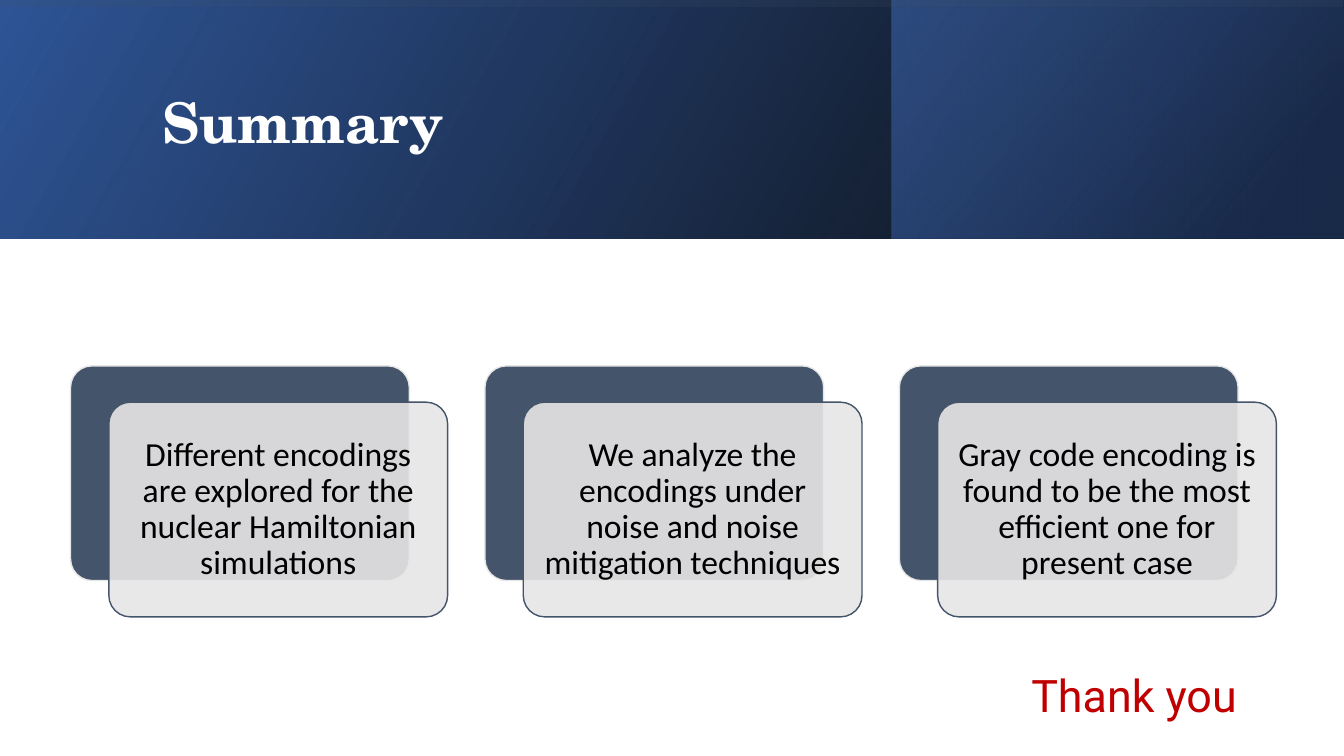
"""Build the closing summary slide with a gradient header and three cards."""
from dataclasses import dataclass

from lxml import etree
from pptx import Presentation
from pptx.dml.color import RGBColor
from pptx.enum.shapes import MSO_SHAPE
from pptx.enum.text import MSO_ANCHOR, PP_ALIGN
from pptx.oxml.ns import qn
from pptx.util import Inches, Pt

RECT = MSO_SHAPE.RECTANGLE
ROUNDED = MSO_SHAPE.ROUNDED_RECTANGLE
MIDDLE = MSO_ANCHOR.MIDDLE
LEFT, CENTER = PP_ALIGN.LEFT, PP_ALIGN.CENTER

COLORS = {
    "black": "000000",
    "white": "FFFFFF",
    "navy": "203864",
    "royal": "2F5597",
    "blue": "4472C4",
    "slate": "44546A",
    "mist": "E7E6E6",
    "red": "C00000",
}
SLIDE_W, SLIDE_H = 13.33, 7.5
HEADER_H = 2.37
CARD_X, CARD_Y, CARD_STEP = 0.7, 3.63, 4.11
CARD_W, CARD_H = 3.36, 2.13
FRONT_DX, FRONT_DY = 0.38, 0.36


@dataclass
class Stop:
    pos: int
    color: str
    alpha: int = 100


@dataclass
class Band:
    x: float
    w: float
    angle: int
    stops: list[Stop]


@dataclass
class Font:
    name: str
    size: int
    color: str
    bold: bool = False


BANDS = [
    Band(0, SLIDE_W, 210, [Stop(0, "black", 96), Stop(100, "royal")]),
    Band(8.84, 4.49, 220, [Stop(19, "navy", 68), Stop(100, "blue", 48)]),
    Band(0, SLIDE_W, 90, [Stop(0, "slate", 16), Stop(3, "slate", 16),
                          Stop(3, "royal", 0), Stop(100, "royal", 0)]),
]
CARDS = [
    "Different encodings are explored for the nuclear Hamiltonian simulations",
    "We analyze the encodings under noise and noise mitigation techniques",
    "Gray code encoding is found to be the most efficient one for present case",
]
TITLE_FONT = Font("TeX Gyre Schola", 40, "white", True)
CARD_FONT = Font("Calibri", 24, "black")
THANKS_FONT = Font("Roboto", 32, "red")


def rgb(name: str) -> RGBColor:
    """Return a palette colour."""
    return RGBColor.from_string(COLORS[name])


def add_alpha(clr, percent: int) -> None:
    """Set the opacity of a colour element."""
    etree.SubElement(clr, qn("a:alpha"), val=str(percent * 1000))


def add_box(s, kind, x: float, y: float, w: float, h: float):
    """Add a preset shape without shadow or line."""
    sp = s.shapes.add_shape(kind, Inches(x), Inches(y), Inches(w), Inches(h))
    sp.shadow.inherit = False
    sp.line.fill.background()
    return sp


def add_band(s, band: Band) -> None:
    """Add a header band with a linear gradient."""
    sp = add_box(s, RECT, band.x, 0, band.w, HEADER_H)
    sp.fill.gradient()
    grad = sp.element.spPr.find(qn("a:gradFill"))
    stops = grad.find(qn("a:gsLst"))
    for old in list(stops):
        stops.remove(old)
    for stop in band.stops:
        gs = etree.SubElement(stops, qn("a:gs"), pos=str(stop.pos * 1000))
        clr = etree.SubElement(gs, qn("a:srgbClr"), val=COLORS[stop.color])
        add_alpha(clr, stop.alpha)
    lin = grad.find(qn("a:lin"))
    lin.set("ang", str(band.angle * 60000))
    lin.set("scaled", "0")


def write(tf, text: str, font: Font, align=LEFT, spacing: float = 1.0) -> None:
    """Write one run into a text frame."""
    p = tf.paragraphs[0]
    p.alignment = align
    p.line_spacing = spacing
    r = p.add_run()
    r.text = text
    r.font.name = font.name
    r.font.size = Pt(font.size)
    r.font.bold = font.bold
    r.font.color.rgb = rgb(font.color)


def add_text(s, x: float, y: float, w: float, h: float, wrap: bool):
    """Add a text box and return its text frame."""
    tf = s.shapes.add_textbox(Inches(x), Inches(y), Inches(w), Inches(h)).text_frame
    tf.word_wrap = wrap
    return tf


def add_panel(s, x: float, y: float, fill: str, line: str):
    """Add one rounded panel of a card."""
    sp = add_box(s, ROUNDED, x, y, CARD_W, CARD_H)
    sp.adjustments[0] = 0.1
    sp.fill.solid()
    sp.fill.fore_color.rgb = rgb(fill)
    sp.line.color.rgb = rgb(line)
    sp.line.width = Pt(1)
    return sp


def add_card(s, x: float, text: str) -> None:
    """Add a dark panel with a translucent text panel over it."""
    add_panel(s, x, CARD_Y, "slate", "mist")
    sp = add_panel(s, x + FRONT_DX, CARD_Y + FRONT_DY, "mist", "slate")
    add_alpha(sp.element.spPr.find(qn("a:solidFill"))[0], 90)
    tf = sp.text_frame
    tf.word_wrap = True
    tf.vertical_anchor = MIDDLE
    tf.margin_left = tf.margin_right = Inches(0.14)
    tf.margin_top = tf.margin_bottom = Inches(0.14)
    write(tf, text, CARD_FONT, CENTER, 0.9)


def main() -> None:
    """Build and save the slide."""
    prs = Presentation()
    prs.slide_width, prs.slide_height = Inches(SLIDE_W), Inches(SLIDE_H)
    s = prs.slides.add_slide(prs.slide_layouts[6])
    for band in BANDS:
        add_band(s, band)
    tf = add_text(s, 1.51, 0.38, 10.63, 1.72, True)
    tf.vertical_anchor = MIDDLE
    write(tf, "Summary", TITLE_FONT, spacing=0.9)
    for i, text in enumerate(CARDS):
        add_card(s, CARD_X + i * CARD_STEP, text)
    write(add_text(s, 10.13, 6.58, 2.29, 0.64, False), "Thank you", THANKS_FONT)
    prs.save("out.pptx")


if __name__ == "__main__":
    main()
